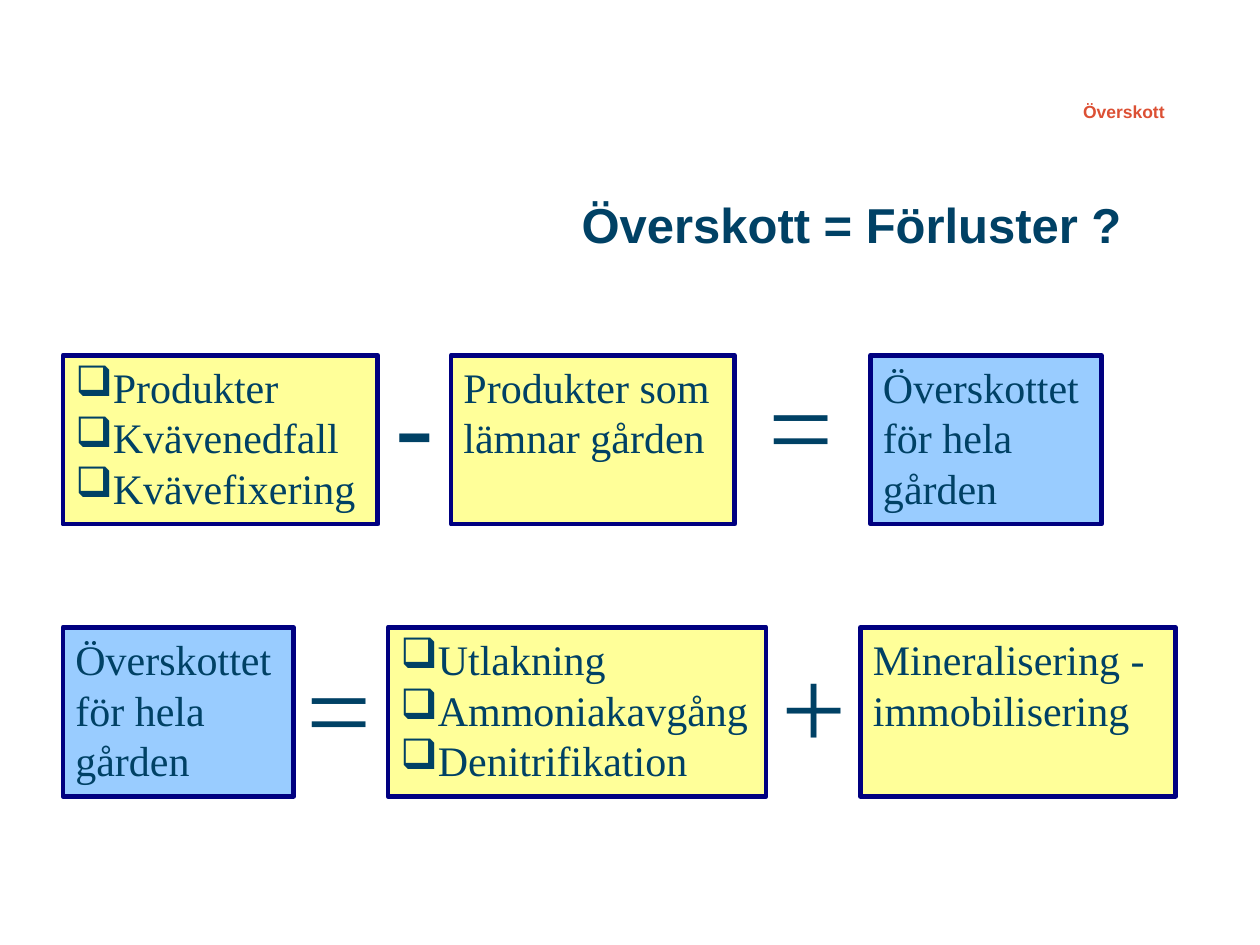
import pptx
import pptx.dml.color
import pptx.enum.shapes
import pptx.enum.text
import pptx.oxml.ns
import pptx.util
from lxml import etree

Inches = pptx.util.Inches
Pt = pptx.util.Pt
Align = pptx.enum.text.PP_ALIGN
Anchor = pptx.enum.text.MSO_ANCHOR

SANS, SERIF = "Arial", "Times New Roman"
INK, ACCENT, BORDER = "004165", "DC5034", "000080"
YELLOW, BLUE = "FFFF99", "99CCFF"
BOX_HEIGHT = 1.34
TOP_ROW, BOTTOM_ROW = 2.82, 4.98
SURPLUS = "Överskottet för hela gården"


def color(value):
    return pptx.dml.color.RGBColor.from_string(value)


def add_span(para, text, size, font=SERIF, ink=INK, bold=False):
    span = para.add_run()
    span.text = text
    span.font.name = font
    span.font.size = Pt(size)
    span.font.bold = bold
    span.font.color.rgb = color(ink)


def add_bullet(para):
    properties = para._p.get_or_add_pPr()
    properties.set("marL", "0")
    properties.set("indent", "0")
    bullet = etree.SubElement(properties, pptx.oxml.ns.qn("a:buChar"))
    bullet.set("char", "❑")


def add_box(page, left, top, width, fill, lines):
    """Add a framed box; several lines become a bulleted list."""
    box = page.shapes.add_shape(
        pptx.enum.shapes.MSO_SHAPE.RECTANGLE,
        Inches(left), Inches(top), Inches(width), Inches(BOX_HEIGHT))
    box.shadow.inherit = False
    box.fill.solid()
    box.fill.fore_color.rgb = color(fill)
    box.line.color.rgb = color(BORDER)
    box.line.width = Pt(2.75)
    frame = box.text_frame
    frame.word_wrap = True
    frame.vertical_anchor = Anchor.TOP
    for index, line in enumerate(lines):
        para = frame.add_paragraph() if index else frame.paragraphs[0]
        para.alignment = Align.LEFT
        if len(lines) > 1:
            add_bullet(para)
        add_span(para, line, 24)


def add_text_box(page, left, top, width, height, anchor, align):
    box = page.shapes.add_textbox(
        Inches(left), Inches(top), Inches(width), Inches(height))
    frame = box.text_frame
    frame.word_wrap = True
    frame.vertical_anchor = anchor
    para = frame.paragraphs[0]
    para.alignment = align
    return frame, para


def add_sign(page, sign, left, top):
    _, para = add_text_box(page, left, top, 0.92, 1.2, Anchor.TOP, Align.CENTER)
    add_span(para, sign, 66)


def add_equals(page, left, top):
    frame, para = add_text_box(
        page, left, top, 0.72, 1.6, Anchor.BOTTOM, Align.CENTER)
    frame.margin_bottom = Inches(0.1)
    add_span(para, "=", 66)


def add_header(page):
    _, para = add_text_box(
        page, 7.05, 0.75, 2.29, 0.25, Anchor.MIDDLE, Align.RIGHT)
    para.line_spacing = 1.15
    add_span(para, "Överskott", 10, SANS, ACCENT, True)


def set_title(page, text):
    title = page.shapes.title
    title.left, title.top = Inches(0.5), Inches(1.15)
    title.width, title.height = Inches(8.5), Inches(1.25)
    title.text_frame.vertical_anchor = Anchor.MIDDLE
    para = title.text_frame.paragraphs[0]
    para.alignment = Align.RIGHT
    add_span(para, text, 28, SANS, INK, True)


def main():
    deck = pptx.Presentation()
    deck.slide_width, deck.slide_height = Inches(10), Inches(7.5)
    page = deck.slides.add_slide(deck.slide_layouts[5])
    add_header(page)
    set_title(page, "Överskott = Förluster ?")

    add_box(page, 0.5, TOP_ROW, 2.5, YELLOW,
            ["Produkter", "Kvävenedfall", "Kvävefixering"])
    add_sign(page, "-", 2.83, 2.73)
    add_box(page, 3.58, TOP_ROW, 2.25, YELLOW, ["Produkter som lämnar gården"])
    add_equals(page, 6, 2.4)
    add_box(page, 6.91, TOP_ROW, 1.83, BLUE, [SURPLUS])

    add_box(page, 0.5, BOTTOM_ROW, 1.83, BLUE, [SURPLUS])
    add_equals(page, 2.33, 4.65)
    add_box(page, 3.08, BOTTOM_ROW, 3, YELLOW,
            ["Utlakning", "Ammoniakavgång", "Denitrifikation"])
    add_sign(page, "+", 6, BOTTOM_ROW)
    add_box(page, 6.83, BOTTOM_ROW, 2.5, YELLOW,
            ["Mineralisering - immobilisering"])
    deck.save("out.pptx")


if __name__ == "__main__":
    main()
